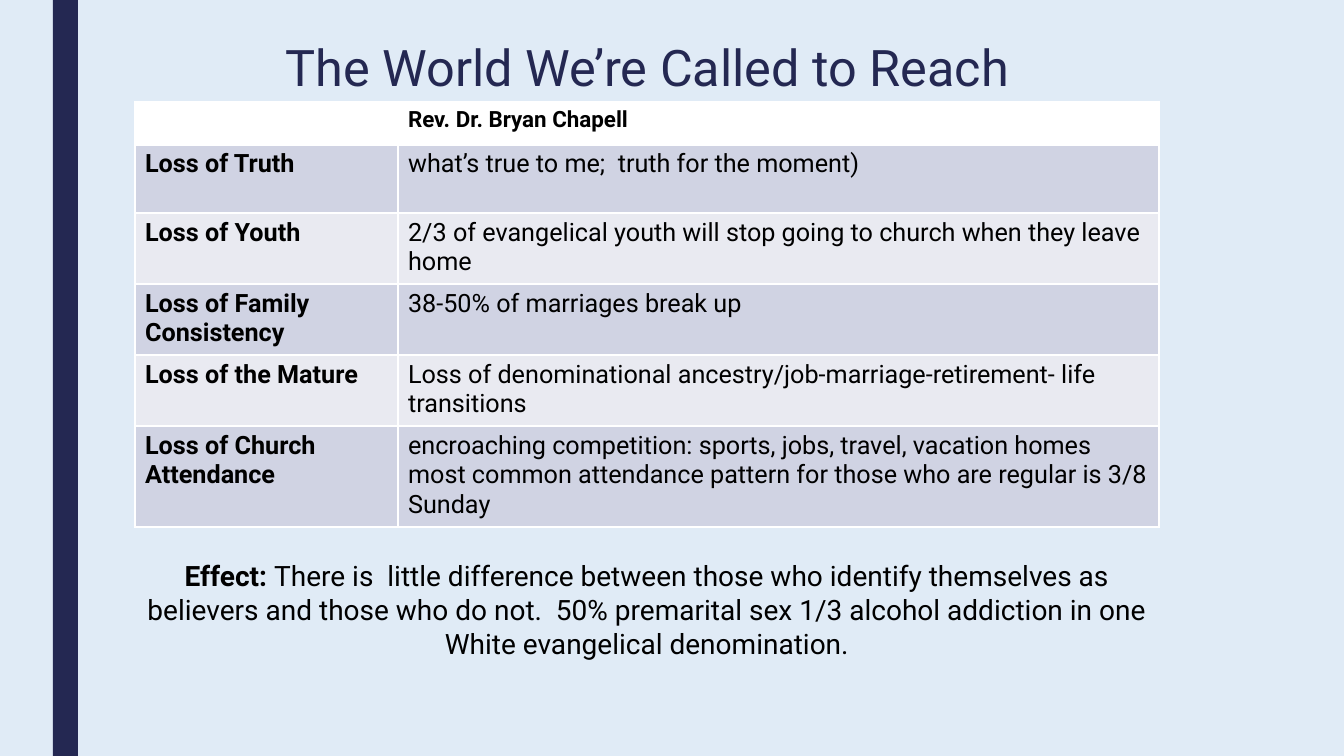
from lxml import etree
from pptx import Presentation
from pptx import util as u
from pptx.dml.color import RGBColor
from pptx.enum import shapes, text
from pptx.oxml import ns

PX = 12192000 / 1344
FONT = "Roboto"
NAVY = RGBColor(0x24, 0x28, 0x52)
PALE_BLUE = RGBColor(0xE0, 0xEB, 0xF6)
WHITE = RGBColor(0xFF, 0xFF, 0xFF)
BLACK = RGBColor(0x00, 0x00, 0x00)
BAND_DARK = RGBColor(0xD0, 0xD3, 0xE3)
BAND_LIGHT = RGBColor(0xE9, 0xEA, 0xF1)

COLUMN_WIDTHS = [263, 761]
ROW_HEIGHTS = [42, 69, 71, 71, 71, 101]
LOSSES = [
    ("", "Rev. Dr. Bryan Chapell"),
    ("Loss of Truth", "what’s true to me;  truth for the moment)"),
    ("Loss of Youth", "2/3 of evangelical youth will stop going to church when they leave home"),
    ("Loss of Family Consistency", "38-50% of marriages break up"),
    ("Loss of the Mature",
     "Loss of denominational ancestry/job-marriage-retirement- life transitions"),
    ("Loss of Church Attendance",
     "encroaching competition: sports, jobs, travel, vacation homes\n"
     "most common attendance pattern for those who are regular is 3/8 Sunday"),
]


def px(*lengths):
    return [u.Emu(round(length * PX)) for length in lengths]


def style(span, size, color=BLACK, bold=False):
    span.font.name = FONT
    span.font.size = u.Pt(size)
    span.font.color.rgb = color
    span.font.bold = bold


def add_centered_text(page, box, spans, size, color, spacing=1.0):
    """Place one centred paragraph made of (text, bold) spans."""
    frame = page.shapes.add_textbox(*px(*box)).text_frame
    frame.word_wrap = True
    para = frame.paragraphs[0]
    para.alignment = text.PP_ALIGN.CENTER
    para.line_spacing = spacing
    for words, bold in spans:
        span = para.add_run()
        span.text = words
        style(span, size, color, bold)


def add_side_bar(page, box):
    bar = page.shapes.add_shape(shapes.MSO_SHAPE.RECTANGLE, *px(*box))
    bar.shadow.inherit = False
    bar.fill.solid()
    bar.fill.fore_color.rgb = NAVY
    bar.line.fill.background()


def set_borders(cell, bottom):
    properties = cell._tc.get_or_add_tcPr()
    for side, width in (("L", 1), ("R", 1), ("T", 1), ("B", bottom)):
        line = etree.SubElement(properties, ns.qn(f"a:ln{side}"), w=str(u.Pt(width)))
        fill = etree.SubElement(line, ns.qn("a:solidFill"))
        etree.SubElement(fill, ns.qn("a:srgbClr"), val=str(WHITE))


def add_loss_table(page, box):
    table = page.shapes.add_table(len(LOSSES), len(COLUMN_WIDTHS), *px(*box)).table
    for column, width in zip(table.columns, px(*COLUMN_WIDTHS)):
        column.width = width
    for row, height in zip(table.rows, px(*ROW_HEIGHTS)):
        row.height = height
    for r, entries in enumerate(LOSSES):
        header = r == 0
        band = WHITE if header else (BAND_LIGHT, BAND_DARK)[r % 2]
        for c, words in enumerate(entries):
            cell = table.cell(r, c)
            set_borders(cell, 3 if header else 1)
            cell.fill.solid()
            cell.fill.fore_color.rgb = band
            cell.text_frame.text = words
            for para in cell.text_frame.paragraphs:
                style(para, 16 if header else 18, bold=header or c == 0)


def build_losses_page(deck):
    page = deck.slides.add_slide(deck.slide_layouts[6])
    page.background.fill.solid()
    page.background.fill.fore_color.rgb = PALE_BLUE
    add_side_bar(page, (53, 0, 25, 756))
    # Title
    add_centered_text(page, (89, 39, 1117, 92),
                      [("The World We’re Called to Reach", False)], 36, NAVY, 0.89)
    # Closing statement
    add_centered_text(page, (135, 554, 1024, 112), [
        ("Effect: ", True),
        ("There is  little difference between those who identify themselves as believers "
         "and those who do not.  50% premarital sex 1/3 alcohol addiction in one White "
         "evangelical denomination.", False),
    ], 20, BLACK)
    add_loss_table(page, (135, 102, sum(COLUMN_WIDTHS), sum(ROW_HEIGHTS)))


def main():
    deck = Presentation()
    deck.slide_width, deck.slide_height = px(1344, 756)
    build_losses_page(deck)
    deck.save("out.pptx")


if __name__ == "__main__":
    main()
